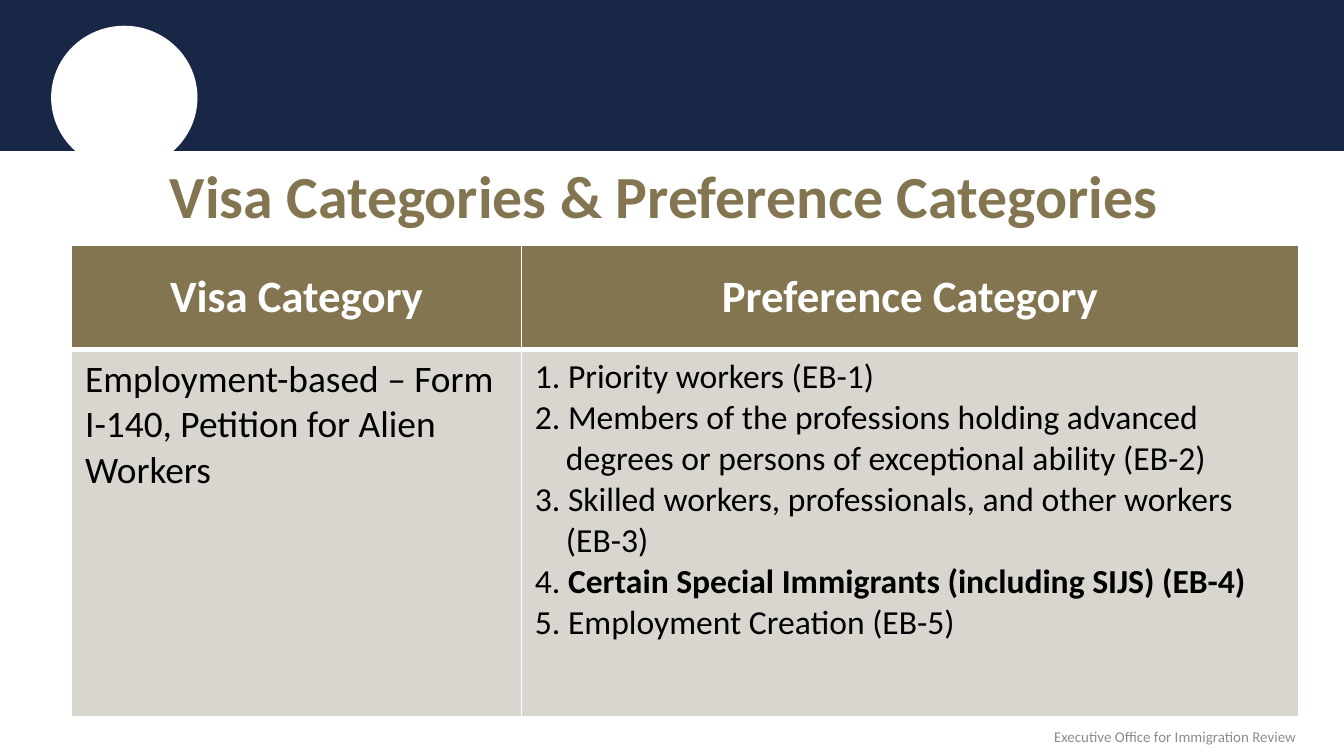
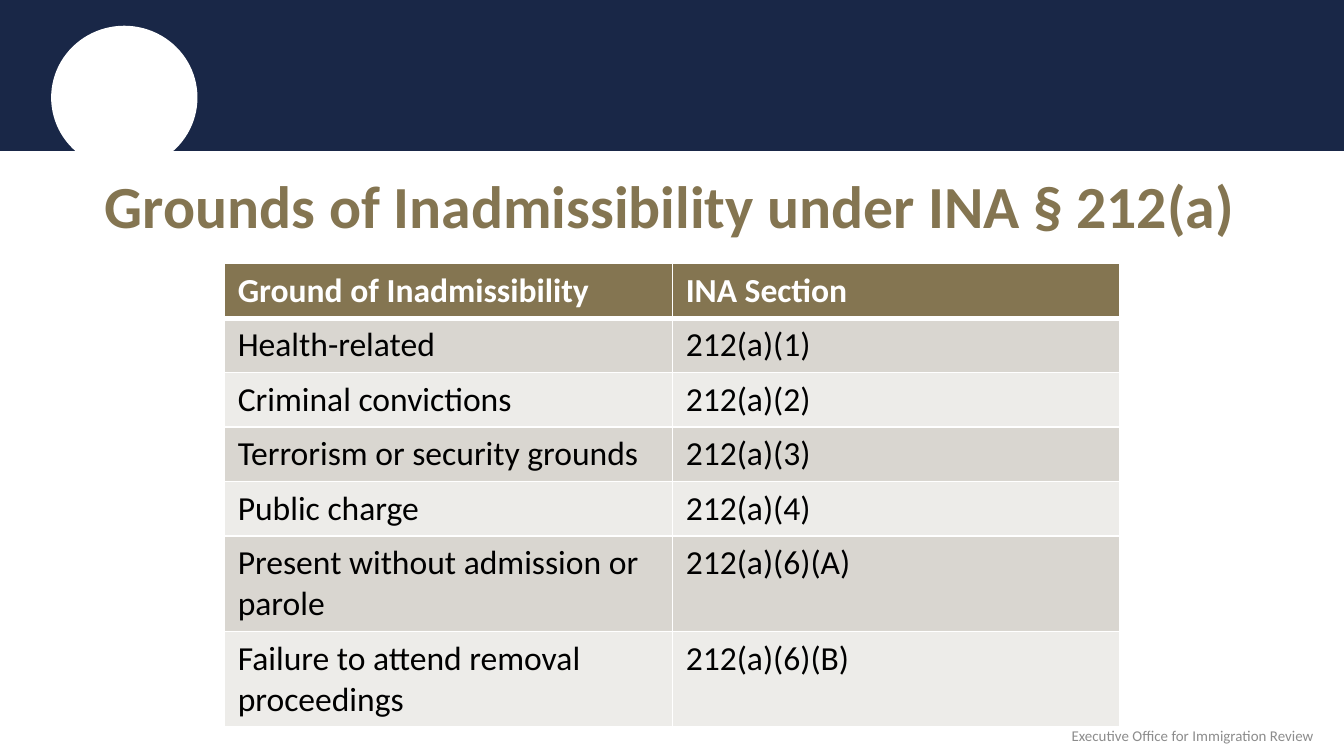
import pptx
import pptx.dml.color
import pptx.enum.shapes
import pptx.enum.text
import pptx.oxml
import pptx.oxml.ns
import pptx.util

Pt = pptx.util.Pt
ALIGN = pptx.enum.text.PP_ALIGN
ANCHOR = pptx.enum.text.MSO_ANCHOR
SHAPE = pptx.enum.shapes.MSO_SHAPE

# Content: a paragraph is a string or a list of (text, bold) runs
FOOTER = "Executive Office for Immigration Review"
SLIDES = [
    {
        "title": "Visa Categories & Preference Categories",
        "title_box": (31.7, 82.8, 663, 47.5),
        "title_align": ALIGN.CENTER,
        "title_right_inset": 22,
        "table_at": (38.4, 131.2),
        "columns": (241, 416.2),
        "rows": (56.2, 196.6),
        "header_format": {"size": 24, "align": ALIGN.CENTER, "anchor": ANCHOR.MIDDLE},
        "body_formats": ({"size": 20}, {"size": 18, "hanging": 16.6}),
        "cells": [
            (["Visa Category"], ["Preference Category"]),
            (
                ["Employment-based – Form I-140, Petition for Alien Workers"],
                [
                    "1. Priority workers (EB-1)",
                    "2. Members of the professions holding advanced degrees "
                    "or persons of exceptional ability (EB-2)",
                    "3. Skilled workers, professionals, and other workers (EB-3)",
                    [("4. ", False),
                     ("Certain Special Immigrants (including SIJS) (EB-4)", True)],
                    "5. Employment Creation (EB-5)",
                ],
            ),
        ],
        "footer_at": (548.6, 384.5),
    },
    {
        "title": "Grounds of Inadmissibility under INA § 212(a)",
        "title_box": (49, 84.2, 622, 55.4),
        "title_align": ALIGN.LEFT,
        "title_right_inset": 7.2,
        "table_at": (120.2, 141.2),
        "columns": (240, 240),
        "rows": (29.2,) * 5 + (51.2,) * 2,
        "header_format": {"size": 18},
        "body_formats": ({"size": 18}, {"size": 18}),
        "cells": [
            (["Ground of Inadmissibility"], ["INA Section"]),
            (["Health-related"], ["212(a)(1)"]),
            (["Criminal convictions"], ["212(a)(2)"]),
            (["Terrorism or security grounds"], ["212(a)(3)"]),
            (["Public charge"], ["212(a)(4)"]),
            (["Present without admission or parole"], ["212(a)(6)(A)"]),
            (["Failure to attend removal proceedings"], ["212(a)(6)(B)"]),
        ],
        "footer_at": (558, 383.8),
    },
]

# Shared look
FONT = "Calibri"
COLORS = {
    "navy": "192747",
    "gold": "847551",
    "white": "FFFFFF",
    "black": "000000",
    "gray": "8C8C8C",
    "band_dark": "D9D6D0",
    "band_light": "EDECE9",
}
WIDTH, HEIGHT = 720, 405
BACKDROP = [
    (SHAPE.RECTANGLE, (0, 0, WIDTH, 81), "navy"),
    (SHAPE.OVAL, (27.4, 13.8, 78.4, 77), "white"),
    (SHAPE.RECTANGLE, (0, 81, WIDTH, 53.6), "white"),
]
FOOTER_SIZE = (162, 20)


def rgb(name):
    return pptx.dml.color.RGBColor.from_string(COLORS[name])


def points(values):
    return [Pt(value) for value in values]


def write(frame, paragraphs, size=18, color="black", bold=False,
          align=ALIGN.LEFT, anchor=ANCHOR.TOP, hanging=0, spacing=None):
    frame.word_wrap = True
    frame.vertical_anchor = anchor
    for index, content in enumerate(paragraphs):
        paragraph = frame.paragraphs[0] if index == 0 else frame.add_paragraph()
        paragraph.alignment = align
        paragraph.line_spacing = spacing
        if hanging:
            properties = paragraph._p.get_or_add_pPr()
            properties.set("marL", str(Pt(hanging)))
            properties.set("indent", str(-Pt(hanging)))
        runs = [(content, bold)] if isinstance(content, str) else content
        for text, run_bold in runs:
            run = paragraph.add_run()
            run.text = text
            run.font.name = FONT
            run.font.size = Pt(size)
            run.font.bold = run_bold
            run.font.color.rgb = rgb(color)


def set_borders(cell, **widths):
    """Draw white cell edges; keys are L, R, T and B."""
    properties = cell._tc.get_or_add_tcPr()
    for side in "LRTB":
        properties.append(pptx.oxml.parse_xml(
            f'<a:ln{side} {pptx.oxml.ns.nsdecls("a")} w="{Pt(widths[side])}">'
            f'<a:solidFill><a:srgbClr val="{COLORS["white"]}"/></a:solidFill>'
            f'</a:ln{side}>'))


def add_backdrop(slide):
    for kind, box, color in BACKDROP:
        shape = slide.shapes.add_shape(kind, *points(box))
        shape.shadow.inherit = False
        shape.fill.solid()
        shape.fill.fore_color.rgb = rgb(color)
        shape.line.fill.background()


def add_title(slide, data):
    title = slide.shapes.title
    title.left, title.top, title.width, title.height = points(data["title_box"])
    # Bring the title in front of the white strip
    title.element.getparent().append(title.element)
    frame = title.text_frame
    frame.auto_size = pptx.enum.text.MSO_AUTO_SIZE.NONE
    frame.margin_right = Pt(data["title_right_inset"])
    write(frame, [data["title"]], size=32, color="gold", bold=True,
          align=data["title_align"], anchor=ANCHOR.MIDDLE, spacing=0.9)


def add_table(slide, data):
    columns, rows = data["columns"], data["rows"]
    box = (*data["table_at"], sum(columns), sum(rows))
    table = slide.shapes.add_table(len(rows), len(columns), *points(box)).table
    for column, width in zip(table.columns, columns):
        column.width = Pt(width)
    for row_index, contents in enumerate(data["cells"]):
        table.rows[row_index].height = Pt(rows[row_index])
        for column_index, paragraphs in enumerate(contents):
            cell = table.cell(row_index, column_index)
            # The header row ends in a heavier rule
            set_borders(cell, L=1, R=1, T=3 if row_index == 1 else 1,
                        B=3 if row_index == 0 else 1)
            if row_index == 0:
                fill = "gold"
                style = {"color": "white", "bold": True, **data["header_format"]}
            else:
                fill = "band_dark" if row_index % 2 else "band_light"
                style = dict(data["body_formats"][column_index])
            cell.fill.solid()
            cell.fill.fore_color.rgb = rgb(fill)
            cell.vertical_anchor = style.pop("anchor", ANCHOR.TOP)
            write(cell.text_frame, paragraphs, **style)


def add_footer(slide, data):
    box = slide.shapes.add_textbox(*points(data["footer_at"] + FOOTER_SIZE))
    write(box.text_frame, [FOOTER], size=8, color="gray",
          align=ALIGN.CENTER, anchor=ANCHOR.MIDDLE)


def main():
    presentation = pptx.Presentation()
    presentation.slide_width, presentation.slide_height = Pt(WIDTH), Pt(HEIGHT)
    title_only = presentation.slide_layouts[5]
    for data in SLIDES:
        slide = presentation.slides.add_slide(title_only)
        add_backdrop(slide)
        add_title(slide, data)
        add_table(slide, data)
        add_footer(slide, data)
    presentation.save("out.pptx")


if __name__ == "__main__":
    main()
